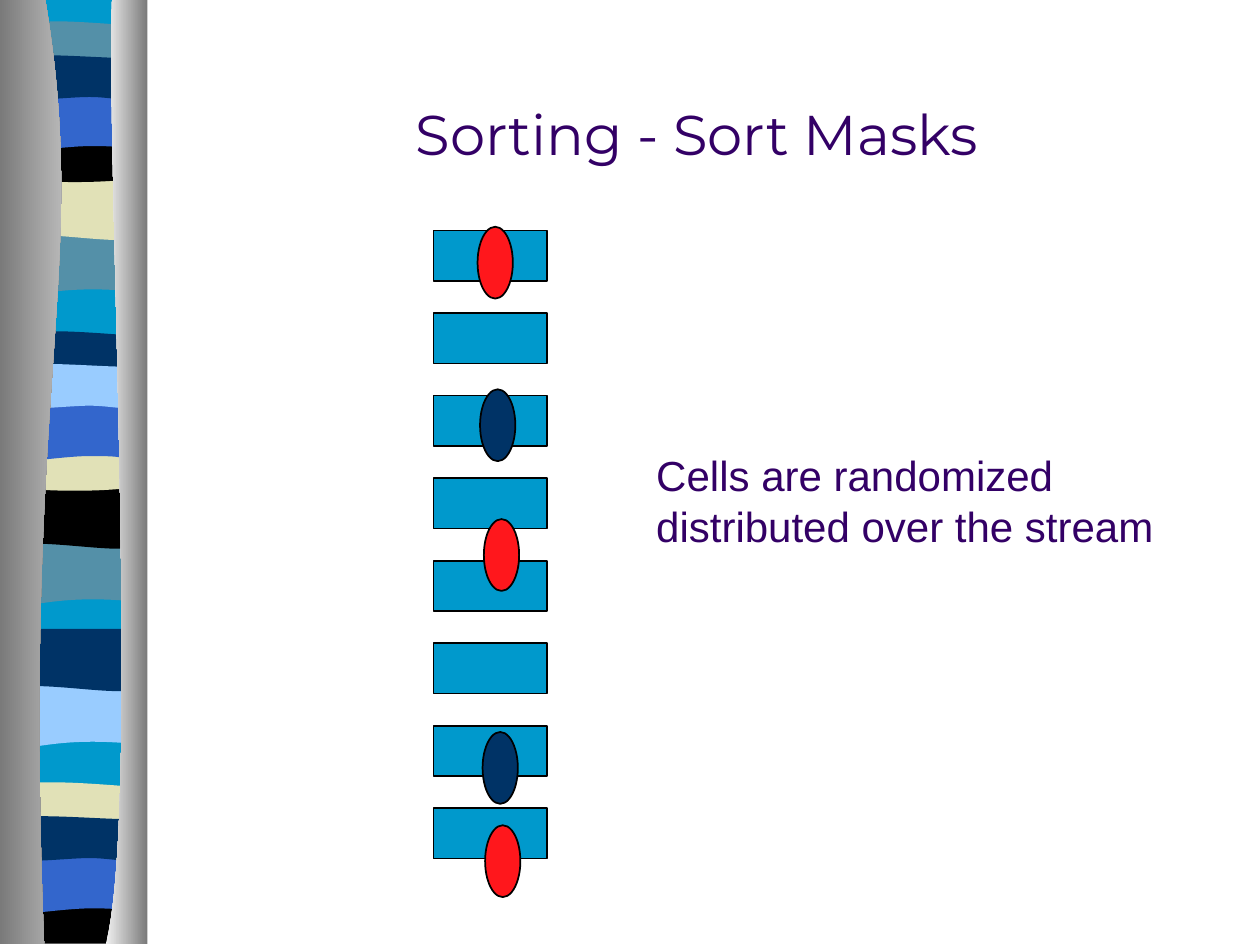
from pptx import Presentation
from pptx.dml.color import RGBColor
from pptx.enum.shapes import MSO_SHAPE as Shape
from pptx.enum.text import MSO_AUTO_SIZE as AutoSize
from pptx.oxml.ns import qn
from pptx.util import Inches, Pt

CYAN = RGBColor(0x00, 0x99, 0xCC)
TEAL = RGBColor(0x54, 0x90, 0xA8)
NAVY = RGBColor(0x00, 0x33, 0x66)
BLUE = RGBColor(0x33, 0x66, 0xCC)
SKY = RGBColor(0x99, 0xCC, 0xFF)
SAND = RGBColor(0xE1, 0xE1, 0xB7)
BLACK = RGBColor(0x00, 0x00, 0x00)
RED = RGBColor(0xFF, 0x17, 0x1C)
PURPLE = RGBColor(0x33, 0x00, 0x66)
DARK_GRAY = RGBColor(0x7A, 0x7A, 0x7A)
LIGHT_GRAY = RGBColor(0xD4, 0xD4, 0xD4)
PALE_GRAY = RGBColor(0xF0, 0xF0, 0xF0)

BAND_LEFT = 0.05
FLAT = [(1.08, 0), (1.08, 7.47), (0, 7.47), (0, 0)]
SAG = [(1.08, 0), (1.08, 0.47), (0.34, 0.39, 0.19, 0.55, 0, 0.47), (0, 0)]
SWELL = [(1.08, 0), (1.08, 0.47), (0.9, 0.55, 0.33, 0.41, 0, 0.47), (0, 0)]
THIN = [(1.08, 0.05), (1.08, 0.29), (0.9, 0.33, 0.19, 0.33, 0, 0.29), (0, 0.05),
        (0.07, 0, 0.23, 0.01, 0.41, 0.01), (0.59, 0.01, 0.94, 0.04, 1.08, 0.05)]
DIP = [(1.08, 0), (1.08, 0.32), (0.9, 0.38, 0.19, 0.38, 0, 0.32), (0, 0),
       (0.66, 0.05, 0.85, 0, 1.08, 0)]
ARCH = [(1.08, 0), (1.08, 0.47), (0.91, 0.42, 0.84, 0.42, 0.66, 0.42),
        (0.48, 0.42, 0.16, 0.47, 0, 0.47), (0, 0)]
RIPPLE = [(1.08, 0.05), (1.08, 0.36), (1.01, 0.41, 0.84, 0.36, 0.66, 0.36),
          (0.48, 0.36, 0.11, 0.41, 0, 0.36), (0, 0.05),
          (0.15, 0, 0.73, 0.05, 0.91, 0.05), (1.09, 0.05, 1.05, 0.05, 1.08, 0.05)]
FOOT = [(1.08, 0), (1.08, 0.37), (0, 0.37), (0, 0), (0.66, 0.05, 0.85, 0, 1.08, 0)]

BANDS = [
    (FLAT, 0, CYAN),
    (SAG, 1.85, TEAL), (SWELL, 1.41, SAND), (THIN, 0.16, TEAL),
    (DIP, 1.08, BLACK), (ARCH, 0.74, BLUE), (RIPPLE, 0.41, NAVY),
    (SAG, 4.31, TEAL), (SWELL, 3.86, BLACK), (THIN, 2.62, NAVY),
    (DIP, 3.53, SAND), (ARCH, 3.2, BLUE), (RIPPLE, 2.86, SKY),
    (SAG, 5.44, SKY), (SWELL, 4.99, NAVY), (THIN, 6.2, SAND),
    (FOOT, 7.12, BLACK), (ARCH, 6.79, BLUE), (RIPPLE, 6.45, NAVY),
]
LEFT_EDGE = [(0.36, 0), (0.72, 2.16, 0.17, 2.96, 0.35, 7.49), (0, 7.49), (0, 0)]
RIGHT_EDGE = [(0.89, 0), (0.84, 1.25, 1.12, 6.46, 0.84, 7.49), (1.17, 7.49), (1.17, 0)]

STREAM_ROWS, STREAM_TOP, STREAM_STEP = 8, 1.83, 0.655
CELLS = [(3.79, 1.8, RED), (3.84, 4.12, RED), (3.85, 6.55, RED),
         (3.83, 5.81, NAVY), (3.81, 3.09, NAVY)]


def bend(shape, outline):
    """Turn each six-number step of an outline into a cubic curve."""
    segments = iter(list(shape._element.iter(qn("a:lnTo"))))
    for step in outline[1:]:
        first = next(segments)
        if len(step) == 6:
            first.tag = qn("a:cubicBezTo")
            for _ in range(2):
                extra = next(segments)
                first.append(extra[0])
                extra.getparent().remove(extra)


def add_outline(slide, outline, left=0, top=0):
    """Add a closed, lineless freeform at an offset."""
    points = [(Inches(left + step[i]), Inches(top + step[i + 1]))
              for step in outline for i in range(0, len(step), 2)]
    builder = slide.shapes.build_freeform(*points[0])
    builder.add_line_segments(points[1:], close=True)
    shape = builder.convert_to_shape()
    bend(shape, outline)
    shape.shadow.inherit = False
    shape.line.fill.background()
    return shape


def add_band(slide, outline, top, color):
    """Add one coloured band of the side strip."""
    fill = add_outline(slide, outline, BAND_LEFT, top).fill
    fill.solid()
    fill.fore_color.rgb = color


def add_edge(slide, outline, colors):
    """Add a strip edge shaded from left to right."""
    fill = add_outline(slide, outline).fill
    fill.gradient()
    fill.gradient_angle = 0
    for position, (stop, color) in enumerate(zip(fill.gradient_stops, colors)):
        stop.position = position
        stop.color.rgb = color


def add_figure(slide, kind, left, top, width, height, color):
    """Add a preset shape with a thin black line."""
    shape = slide.shapes.add_shape(kind, Inches(left), Inches(top), Inches(width), Inches(height))
    shape.shadow.inherit = False
    shape.fill.solid()
    shape.fill.fore_color.rgb = color
    shape.line.color.rgb = BLACK
    shape.line.width = Pt(1)


def add_text(slide, text, left, top, width, height, size, font_name, wrap):
    """Add a text box holding one paragraph."""
    box = slide.shapes.add_textbox(Inches(left), Inches(top), Inches(width), Inches(height))
    frame = box.text_frame
    frame.word_wrap = wrap
    frame.auto_size = AutoSize.SHAPE_TO_FIT_TEXT
    para = frame.paragraphs[0]
    para.text = text
    para.font.size = Pt(size)
    para.font.name = font_name
    para.font.color.rgb = PURPLE


def main():
    """Build the sort masks slide."""
    deck = Presentation()
    deck.slide_width, deck.slide_height = Inches(10), Inches(7.5)
    slide = deck.slides.add_slide(deck.slide_layouts[6])
    for outline, top, color in BANDS:
        add_band(slide, outline, top, color)
    add_edge(slide, LEFT_EDGE, (DARK_GRAY, LIGHT_GRAY))
    add_edge(slide, RIGHT_EDGE, (PALE_GRAY, DARK_GRAY))
    add_text(slide, "Sorting - Sort Masks", 3.2, 0.74, 5.21, 0.64, 32, "Montserrat", False)
    for row in range(STREAM_ROWS):
        add_figure(slide, Shape.RECTANGLE, 3.44, STREAM_TOP + row * STREAM_STEP, 0.9, 0.4, CYAN)
    for left, top, color in CELLS:
        add_figure(slide, Shape.OVAL, left, top, 0.28, 0.57, color)
    add_text(slide, "Cells are randomized distributed over the stream",
             5.11, 3.52, 4.39, 0.91, 24, "Arial", True)
    deck.save("out.pptx")


if __name__ == "__main__":
    main()
